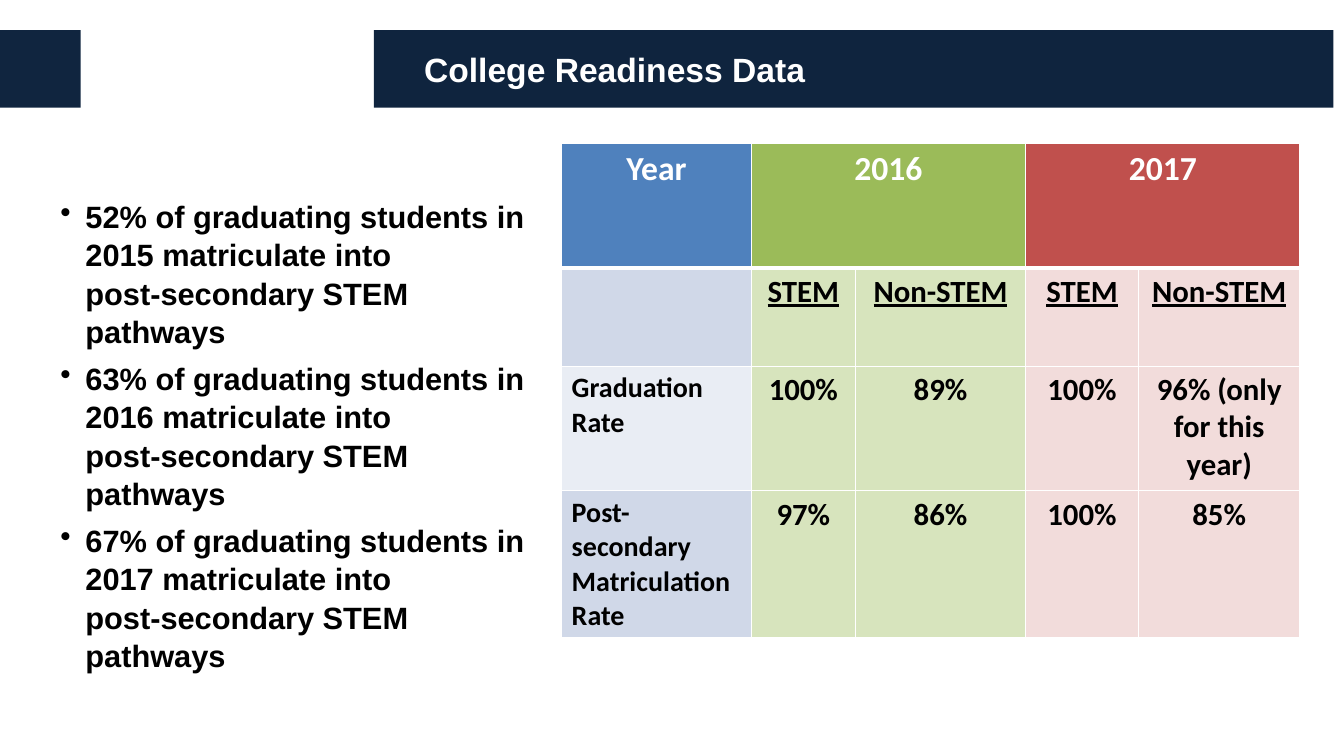
from dataclasses import dataclass

import pptx
import pptx.dml.color
import pptx.enum.shapes
import pptx.enum.text
import pptx.oxml
import pptx.oxml.ns
import pptx.util
from lxml import etree

Pt = pptx.util.Pt
RGBColor = pptx.dml.color.RGBColor
ALIGN = pptx.enum.text.PP_ALIGN
ANCHOR = pptx.enum.text.MSO_ANCHOR

WHITE = RGBColor(0xFF, 0xFF, 0xFF)
BLACK = RGBColor(0x00, 0x00, 0x00)
NAVY_LEFT = RGBColor(0x10, 0x25, 0x3F)
NAVY_TITLE = RGBColor(0x0F, 0x24, 0x3E)
BLUE = RGBColor(0x4F, 0x81, 0xBD)
BLUE_MID = RGBColor(0xD0, 0xD8, 0xE8)
BLUE_PALE = RGBColor(0xE9, 0xED, 0xF4)
GREEN = RGBColor(0x9B, 0xBB, 0x59)
GREEN_PALE = RGBColor(0xD7, 0xE4, 0xBD)
RED = RGBColor(0xC0, 0x50, 0x4D)
RED_PALE = RGBColor(0xF2, 0xDC, 0xDB)


@dataclass(frozen=True)
class Bar:
    left: float
    width: float
    color: RGBColor


@dataclass(frozen=True)
class TableRow:
    height: float
    texts: tuple[str, ...]
    fills: tuple[RGBColor, ...]
    size: float = 22
    color: RGBColor = BLACK
    underline: bool = False


BAR_TOP, BAR_HEIGHT = 21.6, 55.4
BARS = (Bar(0, 57.6, NAVY_LEFT), Bar(267.1, 685.4, NAVY_TITLE))

MATRICULATION = {2015: "52%", 2016: "63%", 2017: "67%"}

COLUMN_WIDTHS = (135.4, 74.5, 121.5, 80.6, 115.5)
DATA_FILLS = (GREEN_PALE, GREEN_PALE, RED_PALE, RED_PALE)
ROWS = (
    TableRow(89, ("Year", "2016", "", "2017", ""),
             (BLUE, GREEN, GREEN, RED, RED), size=24, color=WHITE),
    TableRow(70.2, ("", "STEM", "Non-STEM", "STEM", "Non-STEM"),
             (BLUE_MID, *DATA_FILLS), underline=True),
    TableRow(89, ("Graduation Rate", "100%", "89%", "100%", "96% (only for this year)"),
             (BLUE_PALE, *DATA_FILLS)),
    TableRow(105, ("Post-secondary Matriculation Rate", "97%", "86%", "100%", "85%"),
             (BLUE_MID, *DATA_FILLS)),
)
ROW_LABEL_SIZE = 20


def write(paragraph, text: str, *, size: float, color: RGBColor, font: str = "Arial",
          align=ALIGN.LEFT, underline: bool = False) -> None:
    """Put bold text in a paragraph; a vertical tab breaks the line."""
    paragraph.text = text
    paragraph.alignment = align
    for run in paragraph.runs:
        run.font.name = font
        run.font.size = Pt(size)
        run.font.bold = True
        run.font.color.rgb = color
        if underline:
            run.font.underline = True


def add_bar(slide, bar: Bar) -> None:
    shape = slide.shapes.add_shape(pptx.enum.shapes.MSO_SHAPE.RECTANGLE, Pt(bar.left),
                                   Pt(BAR_TOP), Pt(bar.width), Pt(BAR_HEIGHT))
    shape.shadow.inherit = False
    shape.fill.solid()
    shape.fill.fore_color.rgb = bar.color
    shape.line.fill.background()


def add_text_frame(slide, left: float, top: float, width: float, height: float):
    frame = slide.shapes.add_textbox(Pt(left), Pt(top), Pt(width), Pt(height)).text_frame
    frame.word_wrap = True
    return frame


def set_bullet(paragraph, indent: float) -> None:
    properties = paragraph._p.get_or_add_pPr()
    properties.set("marL", str(Pt(indent)))
    properties.set("indent", str(-Pt(indent)))
    bullet = etree.SubElement(properties, pptx.oxml.ns.qn("a:buChar"))
    bullet.set("char", "•")


def add_findings(slide) -> None:
    frame = add_text_frame(slide, 36, 136.4, 365, 356)
    for number, (year, share) in enumerate(MATRICULATION.items()):
        finding = frame.add_paragraph() if number else frame.paragraphs[0]
        finding.line_spacing = 1.04
        finding.space_before = Pt(3 if number else 0)
        finding.space_after = Pt(3)
        set_bullet(finding, 18)
        write(finding, f"{share} of graduating students in {year} matriculate into\v"
                       "post-secondary STEM pathways", size=22, color=BLACK)


def set_borders(cell, top: float, bottom: float) -> None:
    properties = cell._tc.get_or_add_tcPr()
    widths = {"lnL": 1, "lnR": 1, "lnT": top, "lnB": bottom}
    for position, (side, width) in enumerate(widths.items()):
        properties.insert(position, pptx.oxml.parse_xml(
            f'<a:{side} {pptx.oxml.ns.nsdecls("a")} w="{Pt(width)}"><a:solidFill>'
            f'<a:srgbClr val="{WHITE}"/></a:solidFill></a:{side}>'))


def add_rates_table(slide) -> None:
    table = slide.shapes.add_table(
        len(ROWS), len(COLUMN_WIDTHS), Pt(401.2), Pt(102.4),
        Pt(sum(COLUMN_WIDTHS)), Pt(sum(row.height for row in ROWS))).table
    table.horz_banding = False
    for column, width in zip(table.columns, COLUMN_WIDTHS):
        column.width = Pt(width)

    for r, row in enumerate(ROWS):
        table.rows[r].height = Pt(row.height)
        for c, (text, fill) in enumerate(zip(row.texts, row.fills)):
            cell = table.cell(r, c)
            cell.fill.solid()
            cell.fill.fore_color.rgb = fill
            set_borders(cell, top=3 if r == 1 else 1, bottom=3 if r == 0 else 1)
            is_label = c == 0 and r > 0
            if text:
                write(cell.text_frame.paragraphs[0], text, font="Calibri", color=row.color,
                      size=ROW_LABEL_SIZE if is_label else row.size,
                      align=ALIGN.LEFT if is_label else ALIGN.CENTER,
                      underline=row.underline)

    # Each year spans its STEM and Non-STEM columns
    for first in (1, 3):
        table.cell(0, first).merge(table.cell(0, first + 1))


def main() -> None:
    presentation = pptx.Presentation()
    presentation.slide_width = Pt(960)
    presentation.slide_height = Pt(540)
    slide = presentation.slides.add_slide(presentation.slide_layouts[6])

    # Header bars and title
    for bar in BARS:
        add_bar(slide, bar)
    title = add_text_frame(slide, 295.9, BAR_TOP, 616.3, BAR_HEIGHT)
    title.vertical_anchor = ANCHOR.MIDDLE
    write(title.paragraphs[0], "College Readiness Data", size=24, color=WHITE)

    # Findings on the left, rates on the right
    add_findings(slide)
    add_rates_table(slide)

    presentation.save("out.pptx")


if __name__ == "__main__":
    main()
